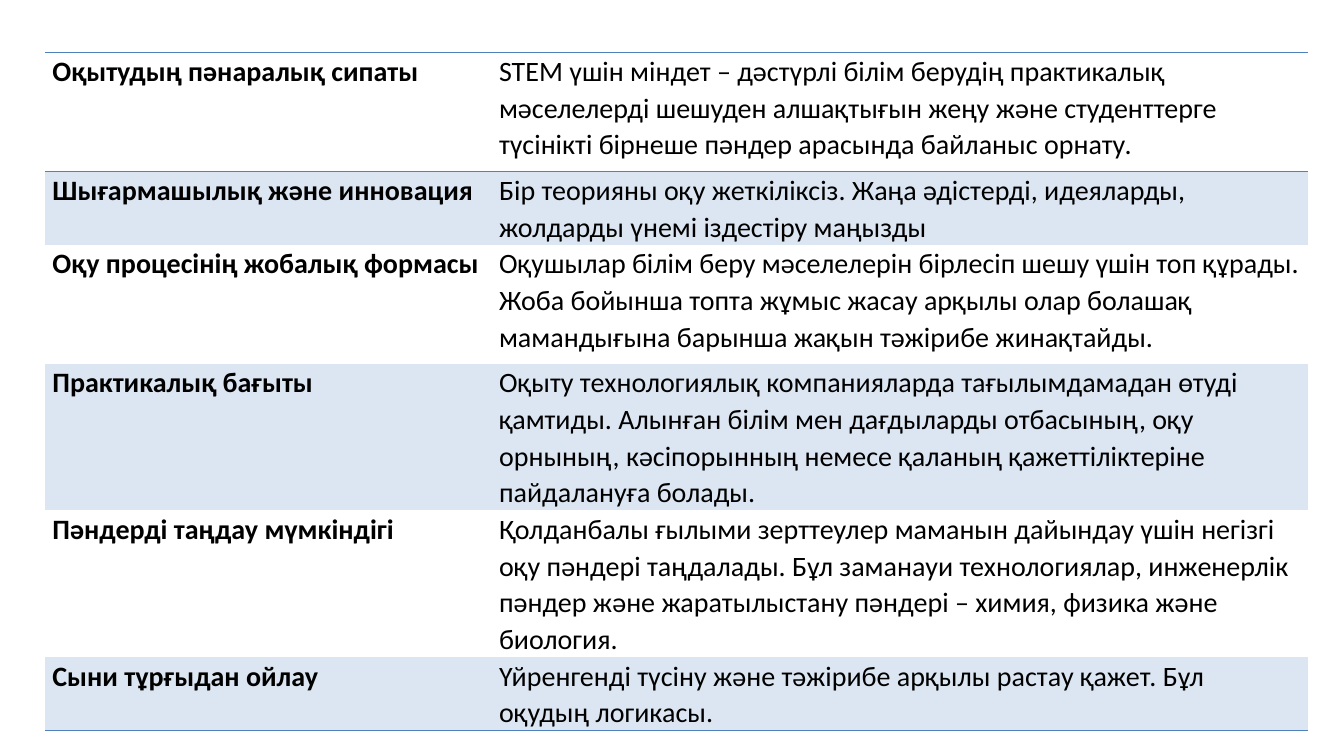
from lxml import etree
from pptx import Presentation
from pptx.dml.color import RGBColor
from pptx.oxml.ns import qn
from pptx.util import Inches, Pt

FEATURES = [
    ("Оқытудың пәнаралық сипаты",
     "STEM үшін міндет – дәстүрлі білім берудің практикалық мәселелерді шешуден "
     "алшақтығын жеңу және студенттерге түсінікті бірнеше пәндер арасында байланыс орнату."),
    ("Шығармашылық және инновация",
     "Бір теорияны оқу жеткіліксіз. Жаңа әдістерді, идеяларды, жолдарды үнемі "
     "іздестіру маңызды"),
    ("Оқу процесінің жобалық формасы",
     "Оқушылар білім беру мәселелерін бірлесіп шешу үшін топ құрады. Жоба бойынша топта "
     "жұмыс жасау арқылы олар болашақ мамандығына барынша жақын тәжірибе жинақтайды."),
    ("Практикалық бағыты",
     "Оқыту технологиялық компанияларда тағылымдамадан өтуді қамтиды. Алынған білім мен "
     "дағдыларды отбасының, оқу орнының, кәсіпорынның немесе қаланың қажеттіліктеріне "
     "пайдалануға болады."),
    ("Пәндерді таңдау мүмкіндігі",
     "Қолданбалы ғылыми зерттеулер маманын дайындау үшін негізгі оқу пәндері таңдалады. "
     "Бұл заманауи технологиялар, инженерлік пәндер және жаратылыстану пәндері – химия, "
     "физика және биология."),
    ("Сыни тұрғыдан ойлау",
     "Үйренгенді түсіну және тәжірибе арқылы растау қажет. Бұл оқудың логикасы."),
]
COL_WIDTHS = (4.43, 8.09)
ROW_HEIGHTS = (1.18, 0.59, 1.18, 1.18, 1.18, 0.59)
BORDERS = {0: ("a:lnT", "a:lnB"), len(FEATURES) - 1: ("a:lnB",)}
NO_STYLE = "{2D5ABB26-0587-4C30-8999-92F81FD0307C}"

BLACK = RGBColor(0x00, 0x00, 0x00)
BLUE = RGBColor(0x4F, 0x81, 0xBD)
PALE_BLUE = RGBColor(0xDC, 0xE6, 0xF2)


def write(cell, text, bold=False, size=20, color=BLACK, font="Calibri"):
    cell.margin_left = cell.margin_right = Inches(0.07)
    cell.margin_top = cell.margin_bottom = 0
    p = cell.text_frame.paragraphs[0]
    p.line_spacing = 1.07
    p.space_after = Pt(8)
    r = p.add_run()
    r.text = text
    r.font.name, r.font.size, r.font.bold = font, Pt(size), bold
    r.font.color.rgb = color


def add_borders(cell, sides):
    tc_pr = cell._tc.get_or_add_tcPr()
    for i, side in enumerate(sides):
        ln = etree.Element(qn(side), w=str(Pt(1)))
        fill = etree.SubElement(ln, qn("a:solidFill"))
        etree.SubElement(fill, qn("a:srgbClr"), val=str(BLUE))
        tc_pr.insert(i, ln)


def main():
    prs = Presentation()
    prs.slide_width, prs.slide_height = Inches(13.33), Inches(7.5)
    s = prs.slides.add_slide(prs.slide_layouts[6])
    frame = s.shapes.add_table(len(FEATURES), len(COL_WIDTHS), Inches(0.45), Inches(0.52),
                               Inches(sum(COL_WIDTHS)), Inches(sum(ROW_HEIGHTS)))
    table = frame.table
    table.first_row = table.horz_banding = False
    table._tbl.tblPr.find(qn("a:tableStyleId")).text = NO_STYLE
    for col, width in zip(table.columns, COL_WIDTHS):
        col.width = Inches(width)
    for i, (row, height) in enumerate(zip(table.rows, ROW_HEIGHTS)):
        row.height = Inches(height)
        for j, cell in enumerate(row.cells):
            write(cell, FEATURES[i][j], bold=j == 0)
            if i % 2:
                cell.fill.solid()
                cell.fill.fore_color.rgb = PALE_BLUE
            else:
                cell.fill.background()
            add_borders(cell, BORDERS.get(i, ()))
    prs.save("out.pptx")


if __name__ == "__main__":
    main()
